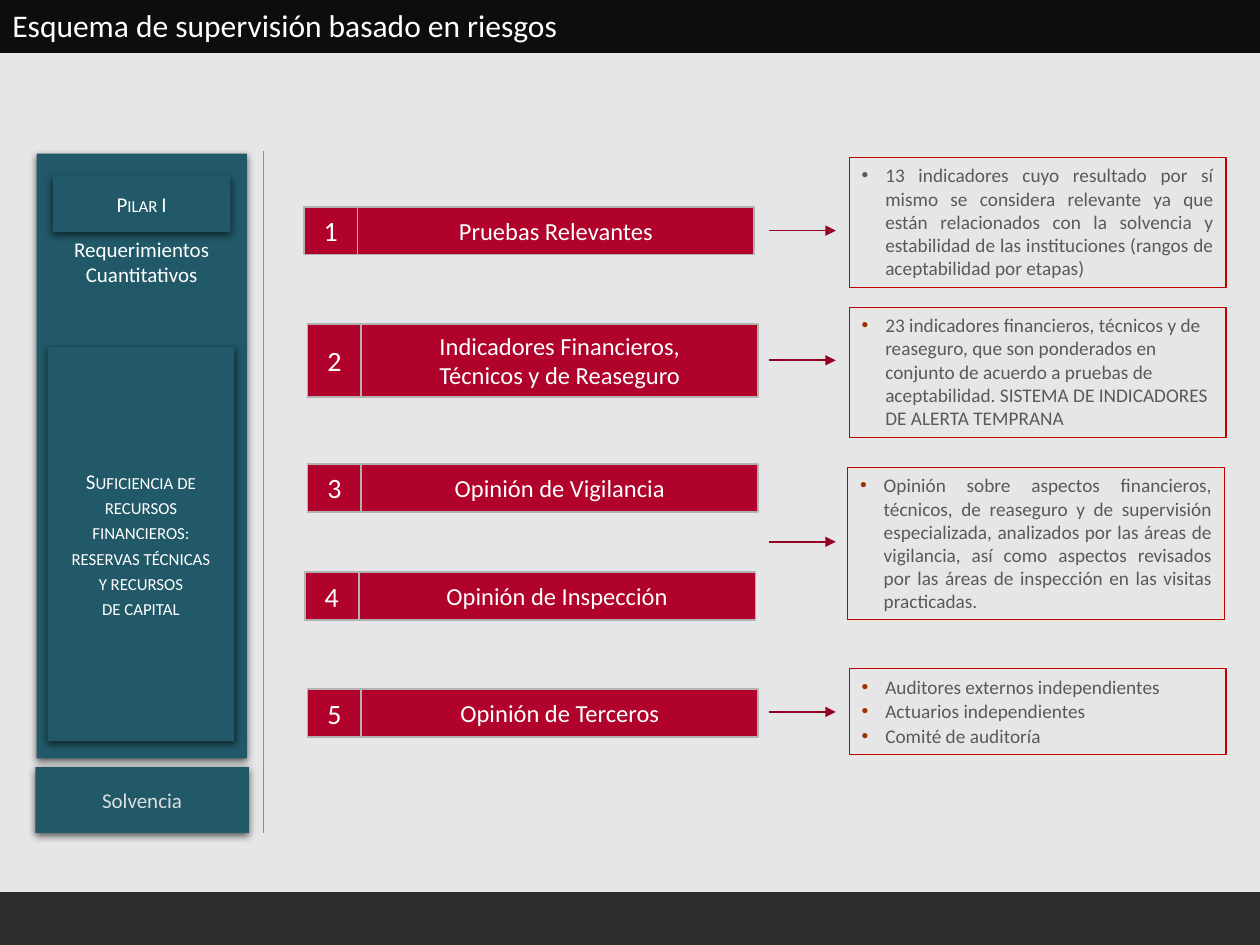
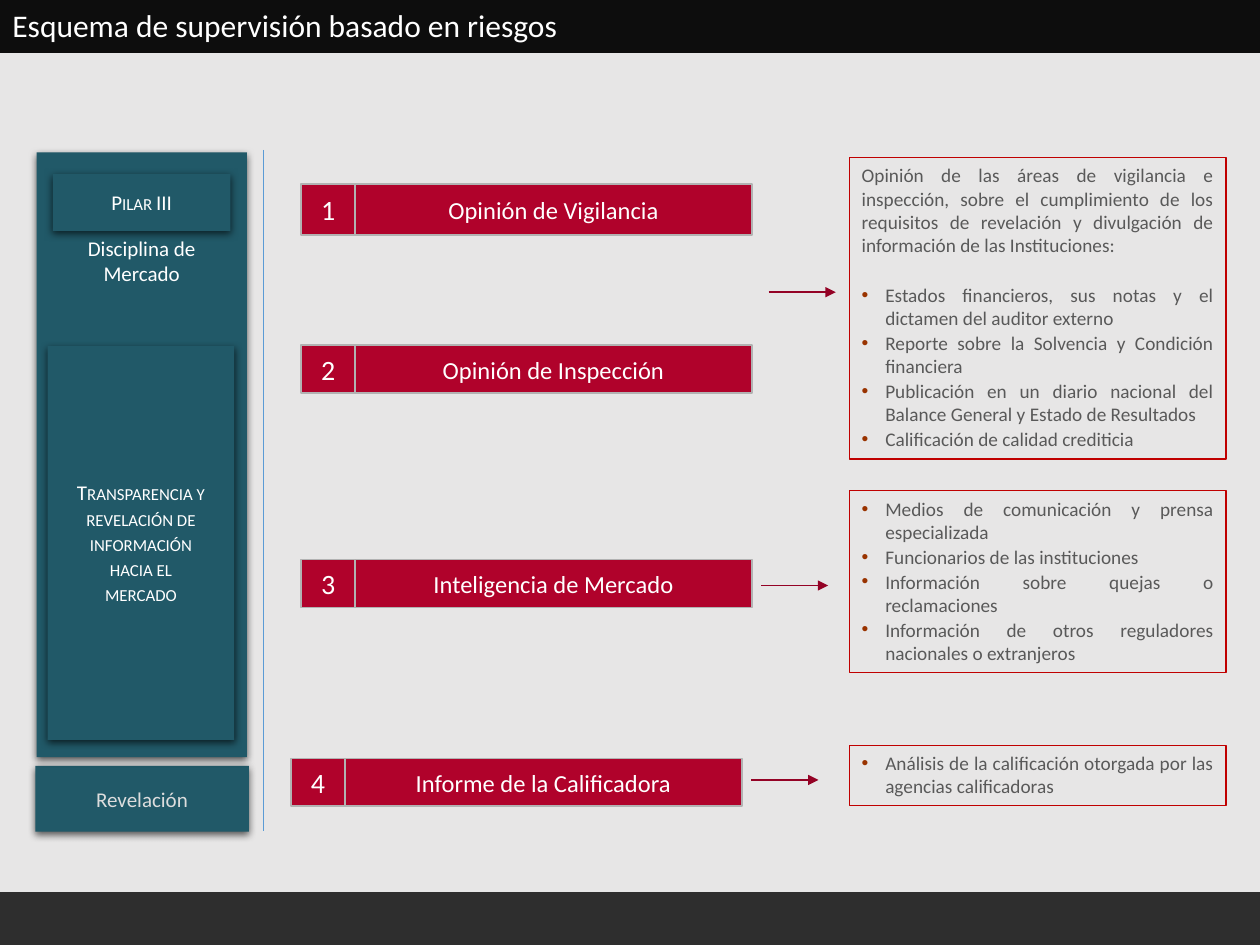
from lxml import etree
from pptx import Presentation
from pptx.dml.color import RGBColor
from pptx.enum.shapes import MSO_CONNECTOR, MSO_SHAPE
from pptx.enum.text import MSO_ANCHOR, PP_ALIGN
from pptx.oxml.ns import qn
from pptx.util import Pt

RECT, STRAIGHT = MSO_SHAPE.RECTANGLE, MSO_CONNECTOR.STRAIGHT
TOP, MIDDLE = MSO_ANCHOR.TOP, MSO_ANCHOR.MIDDLE
LEFT, CENTER, JUSTIFY = PP_ALIGN.LEFT, PP_ALIGN.CENTER, PP_ALIGN.JUSTIFY

BLACK = RGBColor(0x00, 0x00, 0x00)
WHITE = RGBColor(0xFF, 0xFF, 0xFF)
BACKGROUND = RGBColor(0xE7, 0xE6, 0xE6)
HEADER = RGBColor(0x0D, 0x0D, 0x0D)
TEAL = RGBColor(0x21, 0x59, 0x68)
PALE = RGBColor(0xDD, 0xDD, 0xDD)
CRIMSON = RGBColor(0xB0, 0x02, 0x2B)
SILVER = RGBColor(0xB2, 0xB2, 0xB2)
ARROW = RGBColor(0x94, 0x02, 0x25)
RED = RGBColor(0xC0, 0x00, 0x00)
GRAY = RGBColor(0x59, 0x59, 0x59)
RUST = RGBColor(0x99, 0x33, 0x00)
BLUE = RGBColor(0x5B, 0x9B, 0xD5)

FONT = "Calibri"
TITLE = "Esquema de supervisión basado en riesgos"
WIDTH, HEIGHT, BAND = 720, 540, 30.2
NUMBER_W, LABEL_W = 30.8, 226.8
NOTE_X, NOTE_W, INDENT = 485.3, 215.3, 13.5
ARROW_W = 38.4

TITLE_FORMAT = {"size": Pt(18), "color": WHITE}
PILLAR_FORMAT = {"size": Pt(12), "color": WHITE}
BASE_FORMAT = {"size": Pt(12), "color": PALE}
NUMBER_FORMAT = {"size": Pt(16), "color": WHITE}
LABEL_FORMAT = {"size": Pt(14), "color": WHITE}
NOTE_FORMAT = {"size": Pt(11), "color": GRAY}

SLIDES = [
    {
        "pillar": {
            "top": 87.8,
            "name": "Pilar I",
            "subject": ["Requerimientos", "Cuantitativos"],
            "detail": ["Suficiencia de", "recursos", "financieros:",
                       "reservas técnicas", "y recursos", "de capital"],
            "base": "Solvencia",
        },
        "steps": [
            (173.5, 118.1, 27.4, ["Pruebas Relevantes"]),
            (175.7, 185, 41.8, ["Indicadores Financieros,", "Técnicos y de Reaseguro"]),
            (175.7, 265, 27.4, ["Opinión de Vigilancia"]),
            (174.2, 326.9, 27.4, ["Opinión de Inspección"]),
            (175.7, 393.8, 27.4, ["Opinión de Terceros"]),
        ],
        "arrows": [(439.2, 131.8), (439.2, 205.9), (439.2, 309.6), (439.2, 406.8)],
        "notes": [
            {"top": 90, "height": 74.2, "bullet": GRAY, "items": [
                "13 indicadores cuyo resultado por sí mismo se considera relevante ya que "
                "están relacionados con la solvencia y estabilidad de las instituciones "
                "(rangos de aceptabilidad por etapas)"]},
            {"top": 175.7, "height": 74.2, "align": LEFT, "items": [
                "23 indicadores financieros, técnicos y de reaseguro, que son ponderados "
                "en conjunto de acuerdo a pruebas de aceptabilidad. SISTEMA DE "
                "INDICADORES DE ALERTA TEMPRANA"]},
            {"left": 484.4, "top": 267.1, "height": 87.1, "items": [
                "Opinión sobre aspectos financieros, técnicos, de reaseguro y de "
                "supervisión especializada, analizados por las áreas de vigilancia, así "
                "como aspectos revisados por las áreas de inspección en las visitas "
                "practicadas."]},
            {"top": 382.1, "height": 49.2, "align": LEFT, "items": [
                "Auditores externos independientes",
                "Actuarios independientes",
                "Comité de auditoría"]},
        ],
    },
    {
        "pillar": {
            "top": 87.1,
            "name": "Pilar III",
            "subject": ["Disciplina de", "Mercado"],
            "detail": ["Transparencia y", "revelación de", "información",
                       "hacia el", "mercado"],
            "base": "Revelación",
        },
        "steps": [
            (172.1, 105.1, 29, ["Opinión de Vigilancia"]),
            (172.1, 197.3, 27.4, ["Opinión de Inspección"]),
            (172.1, 319.7, 27.4, ["Inteligencia de Mercado"]),
            (166.3, 433.4, 27.4, ["Informe de la Calificadora"]),
        ],
        "arrows": [(439.2, 167), (434.9, 334.6), (429.3, 445.7)],
        "notes": [
            {"top": 90, "height": 172.4,
             "intro": "Opinión de las áreas de vigilancia e inspección, sobre el "
                      "cumplimiento de los requisitos de revelación y divulgación de "
                      "información de las Instituciones:",
             "items": [
                 "Estados financieros, sus notas y el dictamen del auditor externo",
                 "Reporte sobre la Solvencia y Condición financiera",
                 "Publicación en un diario nacional del Balance General y Estado de "
                 "Resultados",
                 "Calificación de calidad crediticia"]},
            {"top": 280.5, "height": 103.7, "items": [
                "Medios de comunicación y prensa especializada",
                "Funcionarios de las instituciones",
                "Información sobre quejas o reclamaciones",
                "Información de otros reguladores nacionales o extranjeros"]},
            {"top": 425.9, "height": 34.2, "items": [
                "Análisis de la calificación otorgada por las agencias calificadoras"]},
        ],
    },
]


def add_box(shapes, box, fill=None, line=None, weight=1):
    """Add a rectangle with the given fill and outline, without shadow."""
    sp = shapes.add_shape(RECT, *map(Pt, box))
    sp.shadow.inherit = False
    if fill is None:
        sp.fill.background()
    else:
        sp.fill.solid()
        sp.fill.fore_color.rgb = fill
    if line is None:
        sp.line.fill.background()
    else:
        sp.line.color.rgb = line
        sp.line.width = Pt(weight)
    return sp


def add_line(slide, start, end, color, weight):
    """Add a straight line between two points, without shadow."""
    cx = slide.shapes.add_connector(STRAIGHT, *map(Pt, start + end))
    cx.line.color.rgb = color
    cx.line.width = Pt(weight)
    etree.SubElement(cx._element.spPr, qn("a:effectLst"))
    return cx


def write(sp, lines, fmt, align=CENTER, anchor=MIDDLE, small_caps=False):
    """Fill a shape with one paragraph per line and return the paragraphs."""
    tf = sp.text_frame
    tf.word_wrap = True
    tf.vertical_anchor = anchor
    for i, text in enumerate(lines):
        p = tf.add_paragraph() if i else tf.paragraphs[0]
        p.alignment = align
        r = p.add_run()
        r.text = text
        r.font.name = FONT
        for name, value in fmt.items():
            if name == "color":
                r.font.color.rgb = value
            else:
                setattr(r.font, name, value)
        if small_caps:
            r._r.get_or_add_rPr().set("cap", "small")
    return tf.paragraphs


def add_bullet(p, color):
    """Give a paragraph a hanging bullet of the given colour."""
    pPr = p._p.get_or_add_pPr()
    pPr.set("marL", str(Pt(INDENT)))
    pPr.set("indent", str(-Pt(INDENT)))
    clr = etree.SubElement(pPr, qn("a:buClr"))
    etree.SubElement(clr, qn("a:srgbClr"), val=str(color))
    etree.SubElement(pPr, qn("a:buFont"), typeface="Arial")
    etree.SubElement(pPr, qn("a:buChar"), char="•")


def add_shadow(sp):
    """Drop a soft black shadow below a shape."""
    effects = sp._element.spPr.find(qn("a:effectLst"))
    shadow = etree.SubElement(effects, qn("a:outerShdw"), blurRad=str(Pt(4.5)),
                              dist=str(Pt(1.5)), dir="5400000", rotWithShape="0")
    clr = etree.SubElement(shadow, qn("a:srgbClr"), val=str(BLACK))
    etree.SubElement(clr, qn("a:alpha"), val="63000")


def add_bands(slide):
    """Draw the header with its title and the translucent footer."""
    add_box(slide.shapes, (0, 0, WIDTH, BAND), HEADER)
    footer = add_box(slide.shapes, (0, HEIGHT - BAND, WIDTH, BAND), BLACK)
    clr = footer._element.spPr.find(qn("a:solidFill"))[0]
    etree.SubElement(clr, qn("a:alpha"), val="80000")
    title = slide.shapes.add_textbox(0, 0, Pt(WIDTH), Pt(29))
    write(title, [TITLE], TITLE_FORMAT, LEFT, TOP)


def add_pillar(slide, top, name, subject, detail, base):
    """Draw the pillar column, its base and the dividing line."""
    shapes = slide.shapes.add_group_shape().shapes
    parts = [
        ((20.2, 350.6, 122, 37.6), [base], BASE_FORMAT, False),
        ((20.9, 0, 120.2, 345.6), subject, PILLAR_FORMAT, False),
        ((30.2, 12.4, 101.5, 32.4), [name], PILLAR_FORMAT, True),
        ((27.2, 110.5, 106.6, 225.2), detail, PILLAR_FORMAT, True),
    ]
    for (x, y, w, h), lines, fmt, small_caps in parts:
        sp = add_box(shapes, (x, top + y, w, h), TEAL)
        add_shadow(sp)
        anchor = TOP if lines is subject else MIDDLE
        write(sp, lines, fmt, CENTER, anchor, small_caps)
        if lines is subject:
            sp.text_frame.margin_top = Pt(47.5)
    add_line(slide, (150.7, top - 1.4), (150.7, top + 388), BLUE, 0.75)


def add_step(slide, number, left, top, height, lines):
    """Draw a numbered bar."""
    shapes = slide.shapes.add_group_shape().shapes
    label = add_box(shapes, (left + NUMBER_W, top, LABEL_W, height), CRIMSON, SILVER)
    write(label, lines, LABEL_FORMAT)
    cell = add_box(shapes, (left, top, NUMBER_W, height), CRIMSON, SILVER)
    write(cell, [str(number)], NUMBER_FORMAT)


def add_arrow(slide, x, y):
    """Draw an arrow from a bar towards its note."""
    cx = add_line(slide, (x, y), (x + ARROW_W, y), ARROW, 1)
    etree.SubElement(cx.line._get_or_add_ln(), qn("a:tailEnd"), type="triangle")


def add_note(slide, top, height, items, left=NOTE_X, intro=None, align=JUSTIFY, bullet=RUST):
    """Draw an outlined note with bullets and an optional introduction."""
    sp = add_box(slide.shapes, (left, top, NOTE_W, height), line=RED, weight=0.75)
    lines = [intro] + items if intro else items
    for p, text in zip(write(sp, lines, NOTE_FORMAT, align, TOP), lines):
        p.space_after = Pt(15.4 if text == intro else 1)
        if text != intro:
            add_bullet(p, bullet)


def build_slide(prs, content):
    """Add one pillar slide."""
    slide = prs.slides.add_slide(prs.slide_layouts[6])
    add_bands(slide)
    add_pillar(slide, **content["pillar"])
    for number, step in enumerate(content["steps"], 1):
        add_step(slide, number, *step)
    for arrow in content["arrows"]:
        add_arrow(slide, *arrow)
    for note in content["notes"]:
        add_note(slide, **note)


def main():
    """Build and save the presentation."""
    prs = Presentation()
    prs.slide_width, prs.slide_height = Pt(WIDTH), Pt(HEIGHT)
    fill = prs.slide_master.background.fill
    fill.solid()
    fill.fore_color.rgb = BACKGROUND
    for content in SLIDES:
        build_slide(prs, content)
    prs.save("out.pptx")


if __name__ == "__main__":
    main()
